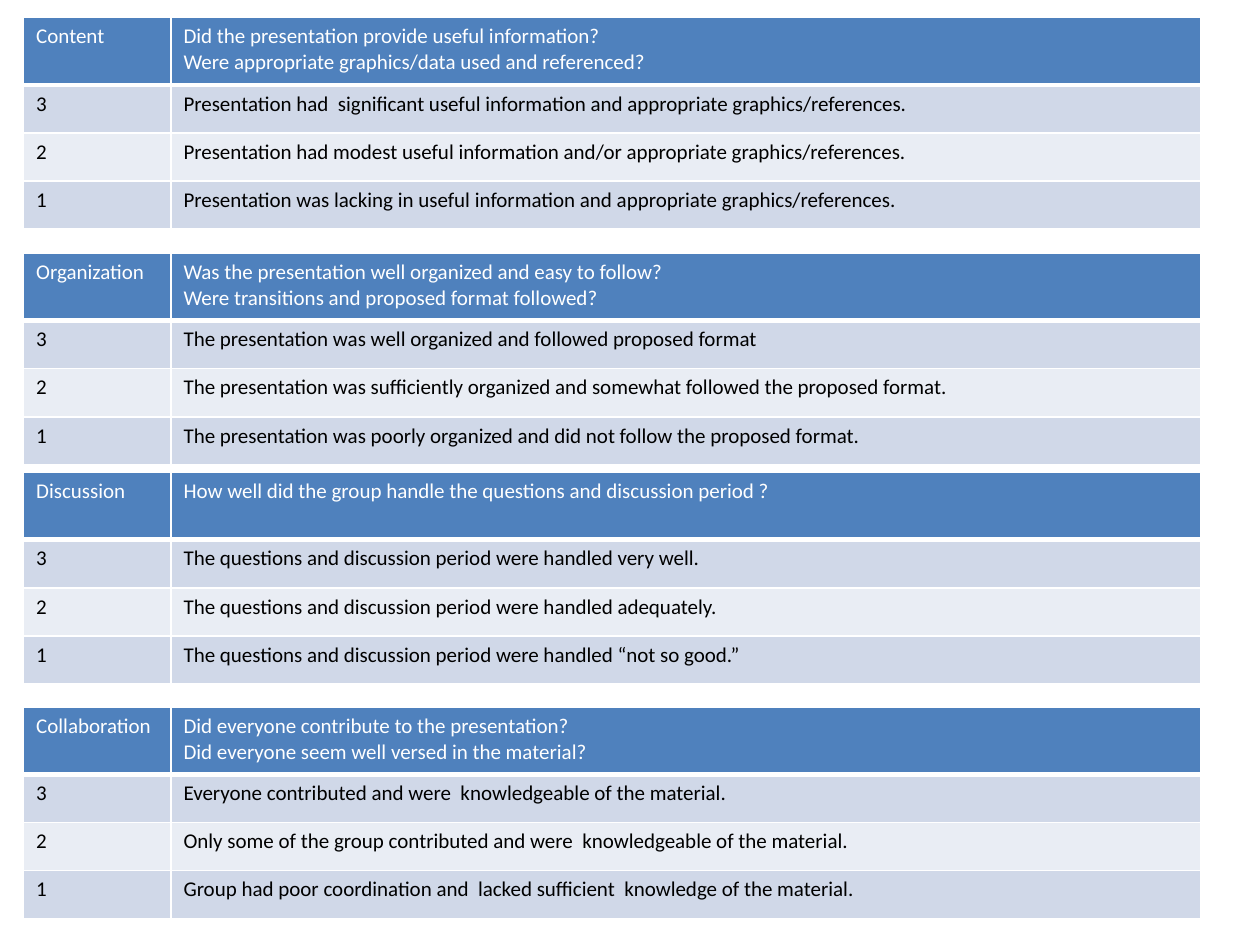
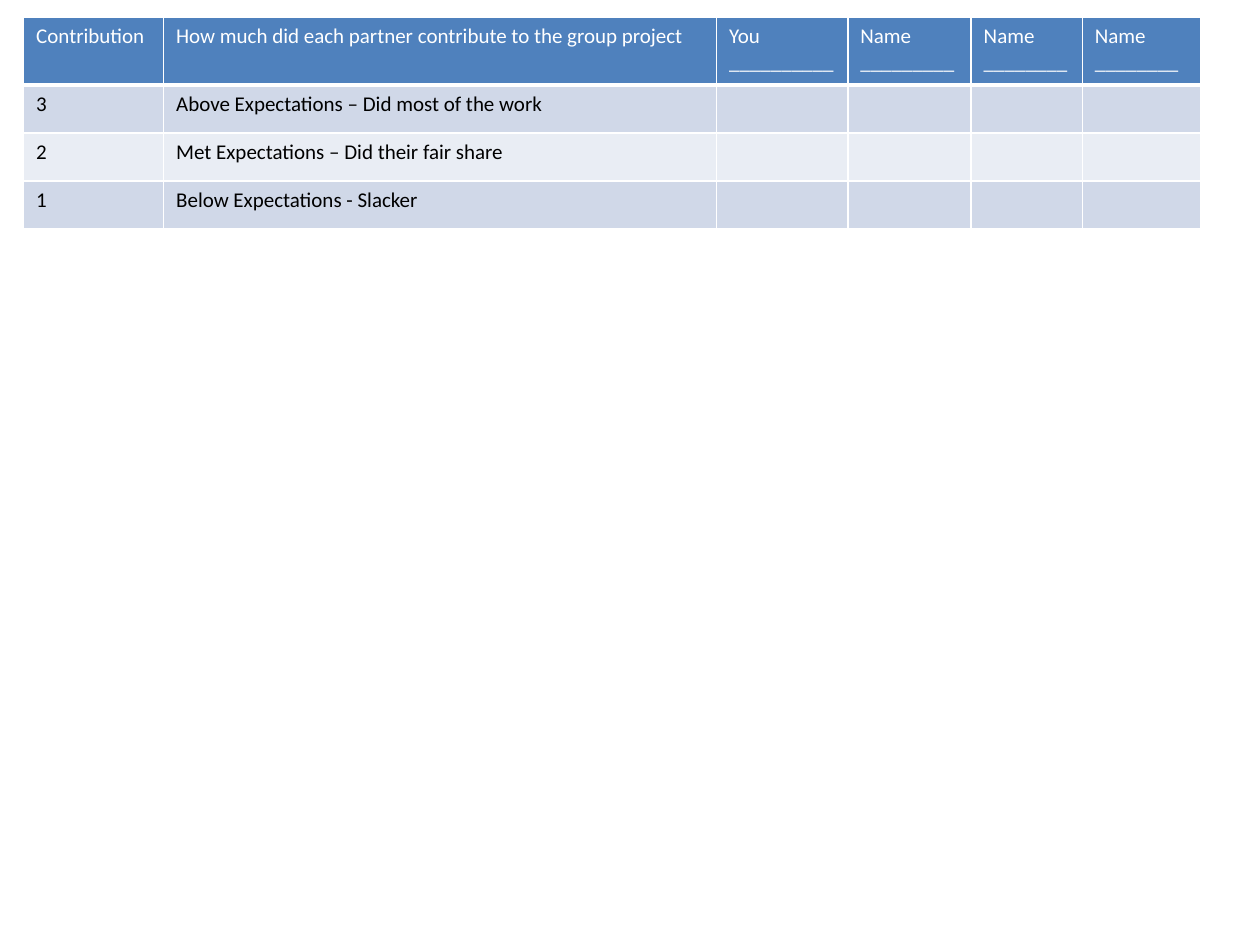
from dataclasses import dataclass

from lxml import etree
from pptx import Presentation
from pptx.dml.color import RGBColor
from pptx.oxml import ns
from pptx.util import Pt

HUES = {
    "head": "4F81BD",
    "odd": "D0D8E8",
    "even": "E9EDF4",
    "white": "FFFFFF",
    "black": "000000",
}
FONT, SIZE = "Calibri", 12
LEFT, TOP = 13.5, 10.1
HEAD_H, ROW_H = 38.4, 27.5
THIN, THICK = 1, 3
PAIR = (84.2, 588.3)
SIX = (80, 316, 75, 70.5, 63.5, 67.5)


@dataclass(frozen=True)
class Rubric:
    top: float
    cols: tuple[float, ...]
    heads: tuple[str, ...]
    levels: tuple[str, str, str]  # wording for scores 3, 2 and 1


# Slide 1: rubrics for the presentation
TALK = (
    Rubric(TOP, PAIR,
           ("Content", "Did the presentation provide useful information?\n"
                       "Were appropriate graphics/data used and referenced?"),
           ("Presentation had  significant useful information and appropriate graphics/references.",
            "Presentation had modest useful information and/or appropriate graphics/references.",
            "Presentation was lacking in useful information and appropriate graphics/references.")),
    Rubric(270, PAIR,
           ("Discussion", "How well did the group handle the questions and discussion period ?"),
           ("The questions and discussion period were handled very well.",
            "The questions and discussion period were handled adequately.",
            "The questions and discussion period were handled “not so good.”")),
    Rubric(144.8, PAIR,
           ("Organization", "Was the presentation well organized and easy to follow?\n"
                            "Were transitions and proposed format followed?"),
           ("The presentation was well organized and followed proposed format",
            "The presentation was sufficiently organized and somewhat followed the proposed format.",
            "The presentation was poorly organized and did not follow the proposed format.")),
    Rubric(404.2, PAIR,
           ("Collaboration", "Did everyone contribute to the presentation?\n"
                             "Did everyone seem well versed in the material?"),
           ("Everyone contributed and were  knowledgeable of the material.",
            "Only some of the group contributed and were  knowledgeable of the material.",
            "Group had poor coordination and  lacked sufficient  knowledge of the material.")),
)

# Slide 2: rubric for each partner
TEAM = (
    Rubric(TOP, SIX,
           ("Contribution", "How much did each partner contribute to the group project",
            "You\n__________", "Name\n_________", "Name\n________", "Name\n________"),
           ("Above Expectations – Did most of the work",
            "Met Expectations – Did their fair share",
            "Below Expectations - Slacker")),
)


def add_edges(cell, base: float) -> None:
    """Draw white borders, with the given width at the bottom."""
    props = cell._tc.get_or_add_tcPr()
    for tag, width in (("lnL", THIN), ("lnR", THIN), ("lnT", THIN), ("lnB", base)):
        line = etree.SubElement(props, ns.qn(f"a:{tag}"), w=str(Pt(width)))
        fill = etree.SubElement(line, ns.qn("a:solidFill"))
        etree.SubElement(fill, ns.qn("a:srgbClr"), val=HUES["white"])


def add_words(cell, words: str, hue: str) -> None:
    """Write one paragraph per line; an empty cell only gets its text size."""
    frame = cell.text_frame
    if not words:
        etree.SubElement(frame.paragraphs[0]._p, ns.qn("a:endParaRPr"), sz=str(SIZE * 100))
        return
    for i, line in enumerate(words.split("\n")):
        para = frame.add_paragraph() if i else frame.paragraphs[0]
        run = para.add_run()
        run.text = line
        run.font.name, run.font.size, run.font.bold = FONT, Pt(SIZE), False
        run.font.color.rgb = RGBColor.from_string(HUES[hue])


def add_rubric(slide, item: Rubric) -> None:
    blanks = ("",) * (len(item.cols) - 2)
    rows = [item.heads]
    rows += [(str(3 - i), text, *blanks) for i, text in enumerate(item.levels)]
    tall = HEAD_H + ROW_H * len(item.levels)
    grid = slide.shapes.add_table(len(rows), len(item.cols), Pt(LEFT), Pt(item.top),
                                  Pt(sum(item.cols)), Pt(tall)).table
    for col, width in zip(grid.columns, item.cols):
        col.width = Pt(width)
    for r, row in enumerate(rows):
        grid.rows[r].height = Pt(ROW_H if r else HEAD_H)
        band = "head" if r == 0 else "odd" if r % 2 else "even"
        for c, words in enumerate(row):
            cell = grid.cell(r, c)
            add_edges(cell, THIN if r else THICK)
            cell.fill.solid()
            cell.fill.fore_color.rgb = RGBColor.from_string(HUES[band])
            add_words(cell, words, "black" if r else "white")


def main() -> None:
    deck = Presentation()
    deck.slide_width, deck.slide_height = Pt(720), Pt(540)
    for page in (TALK, TEAM):
        slide = deck.slides.add_slide(deck.slide_layouts[6])
        for item in page:
            add_rubric(slide, item)
    deck.save("out.pptx")


if __name__ == "__main__":
    main()
